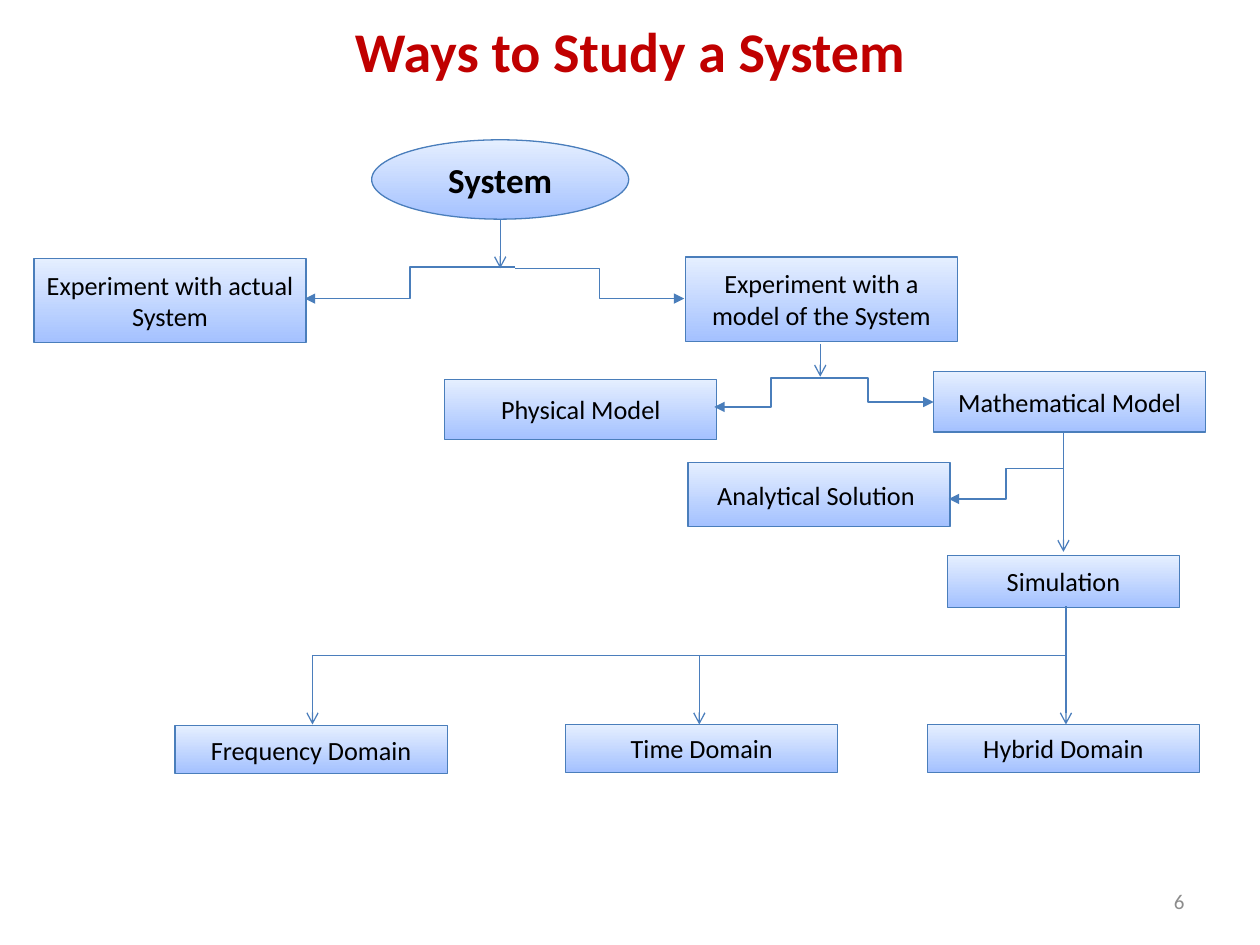
from pptx import Presentation
from pptx.dml.color import RGBColor
from pptx.enum.shapes import MSO_CONNECTOR as Conn, MSO_SHAPE as Shape
from pptx.enum.text import MSO_ANCHOR as Anchor, PP_ALIGN as Align
from pptx.oxml.ns import qn
from pptx.util import Inches, Pt
from lxml import etree

FONT = "Calibri"
BOX_W = 2.16
BOX_LINE, ARROW_LINE = "4A7EBB", "4B7EBC"
GRADIENT = ("A4C1FF", "E5EFFF")


def rgb(value):
    return RGBColor.from_string(value)


def set_text(sp, text, size, color="000000", bold=False, align=Align.CENTER):
    tf = sp.text_frame
    tf.word_wrap = True
    tf.vertical_anchor = Anchor.MIDDLE
    tf.text = text
    p = tf.paragraphs[0]
    p.alignment = align
    font = p.runs[0].font
    font.name, font.size, font.bold = FONT, Pt(size), bold
    font.color.rgb = rgb(color)


def add_node(slide, text, left, top, width, height, kind=Shape.RECTANGLE, size=15, bold=False):
    sp = slide.shapes.add_shape(kind, Inches(left), Inches(top), Inches(width), Inches(height))
    sp.shadow.inherit = False
    sp.fill.gradient()
    sp.fill.gradient_angle = 90
    for stop, color in zip(sp.fill.gradient_stops, GRADIENT):
        stop.color.rgb = rgb(color)
    sp.line.color.rgb = rgb(BOX_LINE)
    sp.line.width = Pt(0.75)
    set_text(sp, text, size, bold=bold)


def add_link(slide, x1, y1, x2, y2, kind=Conn.STRAIGHT, head="arrow", color=ARROW_LINE):
    cx = slide.shapes.add_connector(kind, Inches(x1), Inches(y1), Inches(x2), Inches(y2))
    cx.line.color.rgb = rgb(color)
    cx.line.width = Pt(0.75)
    if head:
        etree.SubElement(cx.line._get_or_add_ln(), qn("a:tailEnd"), type=head)
    etree.SubElement(cx._element.spPr, qn("a:effectLst"))


def add_elbow(slide, x1, y1, x2, y2):
    add_link(slide, x1, y1, x2, y2, Conn.ELBOW, "triangle", BOX_LINE)


def add_title(slide, text, left, top, width, height):
    title = slide.shapes.title
    title.left, title.top = Inches(left), Inches(top)
    title.width, title.height = Inches(width), Inches(height)
    set_text(title, text, 32, "C00000", bold=True)


def add_slide_number(slide, text, left, top, width, height):
    box = slide.shapes.add_textbox(Inches(left), Inches(top), Inches(width), Inches(height))
    set_text(box, text, 12, "8C8C8C", align=Align.RIGHT)


def add_experiments(slide, left, top):
    """System and the two kinds of experiment."""
    add_node(slide, "System", left + 2.68, top, 2.04, 0.63, Shape.OVAL, 20, True)
    add_node(slide, "Experiment with a model of the System", left + 5.17, top + 0.93, BOX_W, 0.67)
    add_node(slide, "Experiment with actual System", left, top + 0.94, BOX_W, 0.67)
    add_elbow(slide, left + 3.82, top + 1.02, left + 5.16, top + 1.26)
    add_elbow(slide, left + 3.82, top + 1.01, left + 2.15, top + 1.26)
    add_link(slide, left + 3.7, top + 0.63, left + 3.7, top + 1.02)


def add_models(slide, left, top):
    """Physical and mathematical model, with the arrow that leads to them."""
    add_node(slide, "Physical Model", left, top + 0.28, BOX_W, 0.48)
    add_node(slide, "Mathematical Model", left + 3.88, top + 0.22, BOX_W, 0.48)
    add_elbow(slide, left + 2.84, top + 0.27, left + 3.88, top + 0.46)
    add_elbow(slide, left + 3.04, top + 0.27, left + 2.14, top + 0.5)
    add_link(slide, left + 2.98, top, left + 2.98, top + 0.26)


def add_solutions(slide, left, top):
    """Analytical solution and simulation, with the arrow that leads to them."""
    add_node(slide, "Analytical Solution ", left, top + 0.23, 2.08, 0.51)
    add_node(slide, "Simulation", left + 2.06, top + 0.97, 1.84, 0.41)
    add_elbow(slide, left + 2.98, top + 0.28, left + 2.07, top + 0.52)
    add_link(slide, left + 2.98, top, left + 2.98, top + 0.94)


def add_domains(slide, left, top):
    """Three domains hung from one bar below the simulation."""
    bar, bottom = top + 0.39, top + 0.94
    domains = [  # text, box left, box top, arrow x, arrow start
        ("Frequency Domain", 0, 0.95, 1.09, bar),
        ("Time Domain", 3.1, 0.94, 4.16, bar),
        ("Hybrid Domain", 5.97, 0.94, 7.07, top),
    ]
    for text, x, y, arrow_x, start in domains:
        add_node(slide, text, left + x, top + y, BOX_W, 0.38)
        add_link(slide, left + arrow_x, start, left + arrow_x, bottom)
    add_link(slide, left + 7.07, bar, left + 1.09, bar, head=None)


def main():
    prs = Presentation()
    prs.slide_width, prs.slide_height = Inches(10), Inches(7.5)
    slide = prs.slides.add_slide(prs.slide_layouts[5])
    add_title(slide, "Ways to Study a System", 0.5, 0.05, 9, 0.7)
    add_slide_number(slide, "6", 7.17, 6.95, 2.33, 0.4)
    add_experiments(slide, 0.27, 1.11)
    add_models(slide, 3.53, 2.73)
    add_solutions(slide, 5.46, 3.44)
    add_domains(slide, 1.39, 4.81)
    prs.save("out.pptx")


if __name__ == "__main__":
    main()
